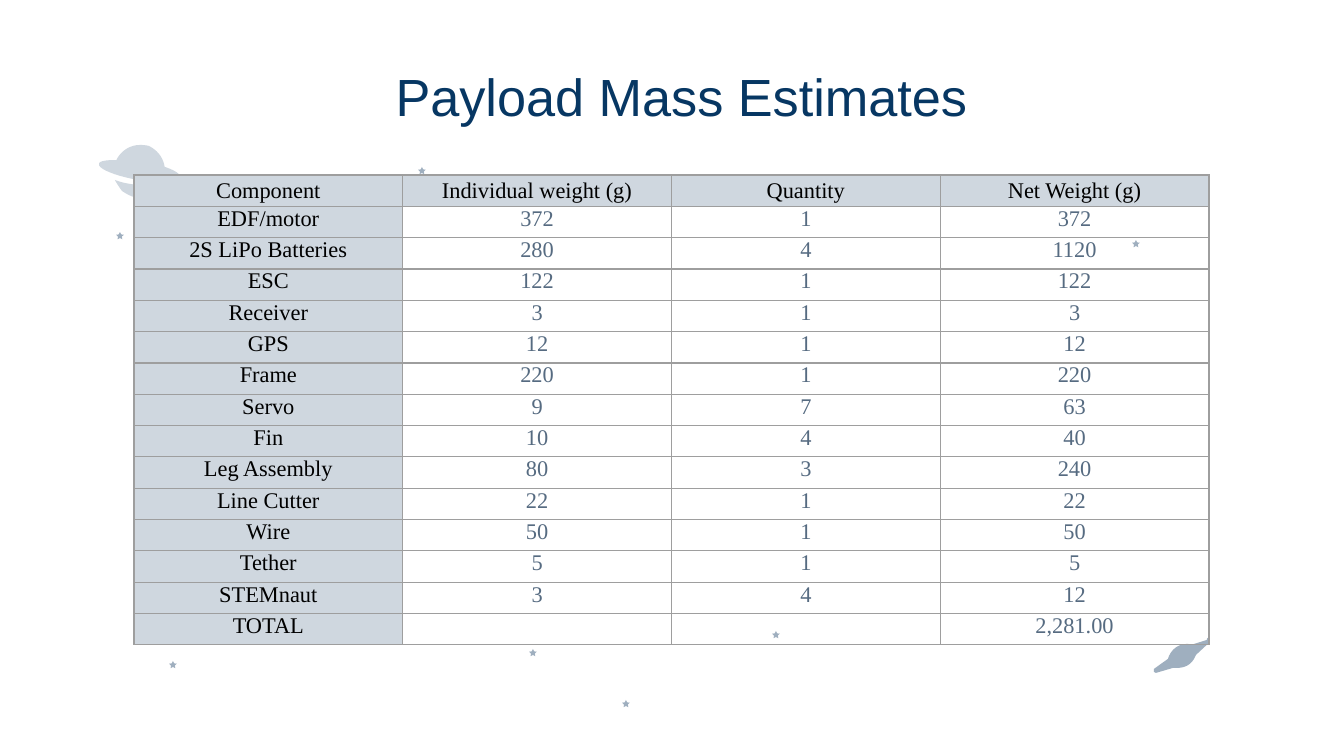
from math import cos, pi, sin

from lxml.etree import SubElement
from pptx import Presentation
from pptx.dml.color import RGBColor
from pptx.enum.text import MSO_ANCHOR as Anchor, PP_ALIGN as Align
from pptx.oxml.ns import qn
from pptx.util import Pt

EMU_PER_PX = 914400 / 134.4
CURVE_STEPS = 10

COLORS = {
    "title": "073763",
    "label": "000000",
    "value": "566B81",
    "planet": "CFD7DF",
    "header": "CFD7DF",
    "star": "9FAFBF",
    "border": "9E9E9E",
}

HEADINGS = ["Component", "Individual weight (g)", "Quantity", "Net Weight (g)"]
COMPONENTS = [
    ("EDF/motor", "372", "1", "372"),
    ("2S LiPo Batteries", "280", "4", "1120"),
    ("ESC", "122", "1", "122"),
    ("Receiver", "3", "1", "3"),
    ("GPS", "12", "1", "12"),
    ("Frame", "220", "1", "220"),
    ("Servo", "9", "7", "63"),
    ("Fin", "10", "4", "40"),
    ("Leg Assembly", "80", "3", "240"),
    ("Line Cutter", "22", "1", "22"),
    ("Wire", "50", "1", "50"),
    ("Tether", "5", "1", "5"),
    ("STEMnaut", "3", "4", "12"),
    ("TOTAL", "", "", "2,281.00"),
]

STAR_CENTERS = [(173, 665), (626, 704), (776, 635), (120, 236),
                (1136, 244), (422, 171), (533, 653)]

# Outlines: a start point, then lines (x, y) and cubic curves (six numbers)
PLANET_BASE = [(115, 180), (117, 184, 120, 188, 122, 191),
               (128, 195, 134, 198, 140, 198), (146, 198, 155, 194, 160, 188),
               (152, 188, 144, 187, 137, 185), (130, 184, 122, 183, 115, 180)]
PLANET_DOME = [(140, 145), (129, 145, 120, 152, 116, 161),
               (117, 161, 118, 161, 121, 161), (128, 161, 134, 163, 141, 164),
               (149, 165, 157, 167, 165, 171), (165, 160, 159, 151, 149, 146),
               (145, 145, 142, 145, 140, 145)]
PLANET_RING = [(117, 160), (106, 160, 99, 161, 99, 164),
               (98, 169, 116, 176, 138, 180), (148, 181, 156, 181, 163, 181),
               (173, 181, 180, 180, 180, 177), (181, 172, 164, 165, 141, 161),
               (132, 160, 124, 160, 117, 160)]
SMALL_PLANET = [(1208, 638), (1208, 638, 1207, 638, 1207, 640), (1191, 645),
                (1189, 644, 1188, 644, 1187, 644),
                (1179, 644, 1171, 649, 1168, 659), (1154, 669),
                (1154, 671, 1154, 672, 1154, 672),
                (1154, 672, 1156, 673, 1156, 673), (1173, 668),
                (1175, 668, 1176, 668, 1177, 668),
                (1187, 668, 1193, 663, 1196, 655), (1210, 642),
                (1210, 641, 1210, 640, 1208, 638)]


def px(length):
    return round(length * EMU_PER_PX)


def rgb(name):
    return RGBColor.from_string(COLORS[name])


def flatten(outline):
    """Turn an outline of lines and cubic curves into points."""
    points = [outline[0]]
    for segment in outline[1:]:
        if len(segment) == 2:
            points.append(segment)
            continue
        controls = [points[-1], segment[:2], segment[2:4], segment[4:]]
        for step in range(1, CURVE_STEPS + 1):
            t = step / CURVE_STEPS
            weights = [(1 - t) ** 3, 3 * t * (1 - t) ** 2, 3 * t * t * (1 - t), t ** 3]
            points.append(tuple(sum(w * c[axis] for w, c in zip(weights, controls))
                                for axis in (0, 1)))
    return points


def star_points(center_x, center_y, outer=4, inner=2):
    points = []
    for corner in range(10):
        radius = inner if corner % 2 else outer
        angle = corner * pi / 5
        points.append((center_x + radius * sin(angle), center_y - radius * cos(angle)))
    return points


def add_outline(page, points, color):
    corners = [(px(x), px(y)) for x, y in points]
    builder = page.shapes.build_freeform(*corners[0], scale=1.0)
    builder.add_line_segments(corners[1:], close=True)
    shape = builder.convert_to_shape()
    shape.shadow.inherit = False
    shape.fill.solid()
    shape.fill.fore_color.rgb = rgb(color)
    shape.line.fill.background()


def add_span(para, text, font, size, color):
    para.alignment = Align.CENTER
    span = para.add_run()
    span.text = text
    span.font.name = font
    span.font.size = Pt(size)
    span.font.color.rgb = rgb(color)


def add_title(page, text):
    box = page.shapes.add_textbox(px(105), px(55), px(1138), px(82))
    frame = box.text_frame
    frame.word_wrap = True
    frame.vertical_anchor = Anchor.MIDDLE
    frame.margin_left = frame.margin_right = px(13)
    frame.margin_top = frame.margin_bottom = px(13)
    add_span(frame.paragraphs[0], text, "Arial", 28, "title")


def add_borders(cell):
    properties = cell._tc.get_or_add_tcPr()
    for index, side in enumerate(("lnL", "lnR", "lnT", "lnB")):
        line = SubElement(properties, qn(f"a:{side}"), w=str(Pt(0.75)))
        fill = SubElement(line, qn("a:solidFill"))
        SubElement(fill, qn("a:srgbClr"), val=COLORS["border"])
        properties.insert(index, line)  # borders come before the fill


def fill_cell(cell, text, is_header, is_label):
    cell.margin_left = cell.margin_right = px(9)
    cell.margin_top = cell.margin_bottom = 0
    cell.vertical_anchor = Anchor.MIDDLE if is_header else Anchor.TOP
    if is_header or is_label:
        cell.fill.solid()
        cell.fill.fore_color.rgb = rgb("header")
    else:
        cell.fill.background()
    add_borders(cell)
    para = cell.text_frame.paragraphs[0]
    if text:
        color = "label" if is_header or is_label else "value"
        add_span(para, text, "Times New Roman", 12, color)
    else:
        # Keeps an empty cell from stretching its row
        SubElement(para._p, qn("a:endParaRPr"), sz="1200")


def add_mass_table(page):
    rows = [HEADINGS, *COMPONENTS]
    frame = page.shapes.add_table(len(rows), len(HEADINGS),
                                  px(134), px(175), px(1075), px(470))
    table = frame.table
    table.first_row = table.horz_banding = False
    for r, row in enumerate(rows):
        for c, text in enumerate(row):
            fill_cell(table.cell(r, c), text, r == 0, c == 0)
    for cell in table.rows[len(rows) - 1].cells:
        if cell.text:
            cell.text_frame.paragraphs[0].space_after = Pt(6)


def main():
    deck = Presentation()
    deck.slide_width, deck.slide_height = px(1344), px(756)
    page = deck.slides.add_slide(deck.slide_layouts[6])

    # Space decoration
    for outline in (PLANET_BASE, PLANET_DOME, PLANET_RING):
        add_outline(page, flatten(outline), "planet")
    add_outline(page, flatten(SMALL_PLANET), "star")
    for center in STAR_CENTERS:
        add_outline(page, star_points(*center), "star")

    # Title and table
    add_title(page, " Payload Mass Estimates")
    add_mass_table(page)

    deck.save("out.pptx")


if __name__ == "__main__":
    main()
